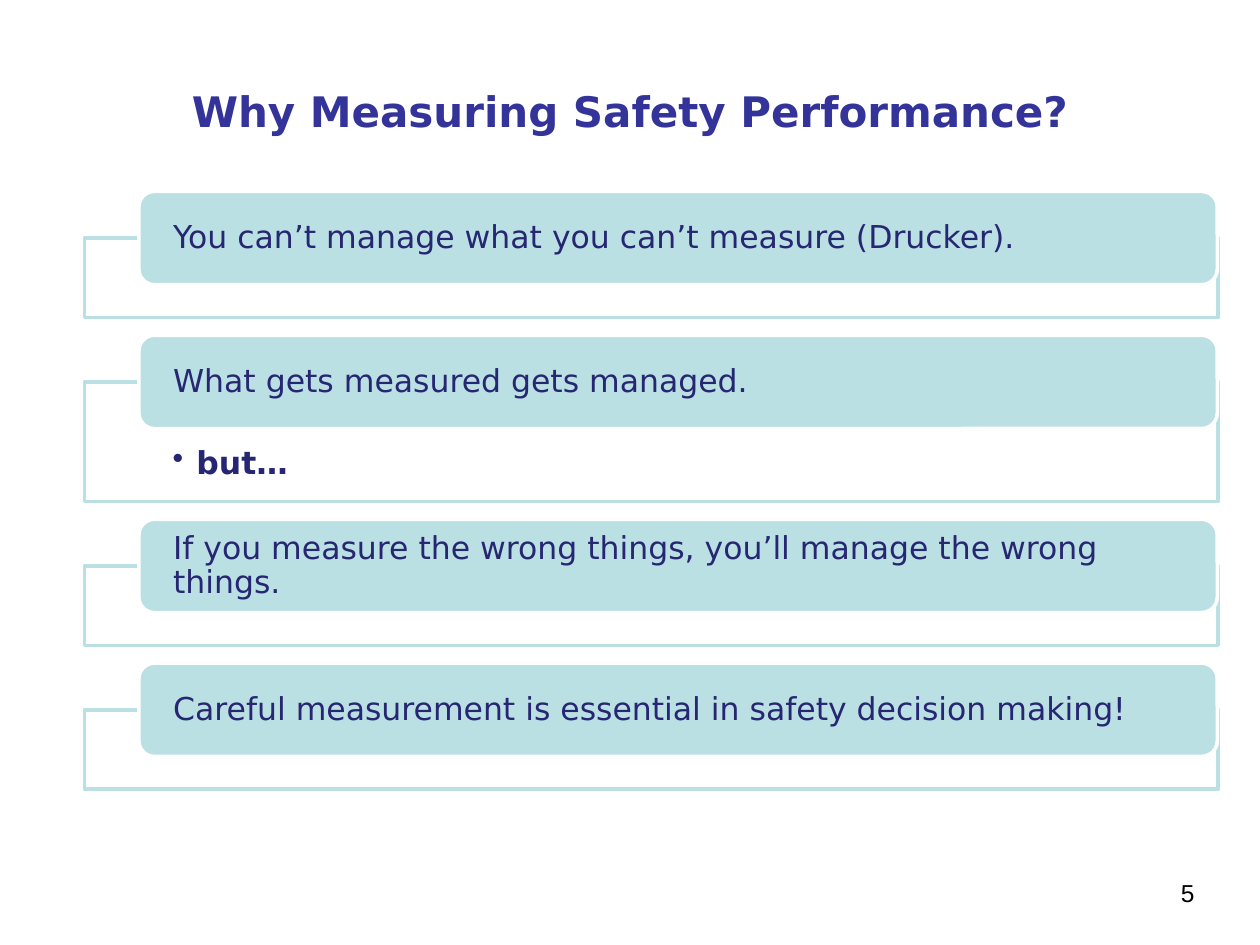
from dataclasses import dataclass

from lxml import etree
from pptx import Presentation
from pptx.dml.color import RGBColor
from pptx.enum.shapes import MSO_SHAPE
from pptx.enum.text import MSO_ANCHOR, PP_ALIGN
from pptx.oxml.ns import qn
from pptx.util import Cm, Pt

RECTANGLE, ROUNDED = MSO_SHAPE.RECTANGLE, MSO_SHAPE.ROUNDED_RECTANGLE
TOP, MIDDLE = MSO_ANCHOR.TOP, MSO_ANCHOR.MIDDLE
LEFT, CENTER, RIGHT = PP_ALIGN.LEFT, PP_ALIGN.CENTER, PP_ALIGN.RIGHT


@dataclass(frozen=True)
class Theme:
    title_color: str = "333399"
    body_color: str = "262673"
    number_color: str = "000000"
    accent: str = "BBE0E3"
    paper: str = "FFFFFF"
    font: str = "DejaVu Sans"
    number_font: str = "Arial"
    title_size: int = 24
    body_size: int = 18
    number_size: int = 14
    outline: int = 2


class SlideBuilder:
    """Draws the parts of one slide in a shared theme."""

    def __init__(self, slide, theme):
        self.slide = slide
        self.theme = theme

    def add_text(self, frame, text, color, size, font, bold=False, align=LEFT,
                 anchor=TOP, margins=(0.25, 0.13, 0.25, 0.13)):
        frame.word_wrap = True
        frame.vertical_anchor = anchor
        (frame.margin_left, frame.margin_top,
         frame.margin_right, frame.margin_bottom) = map(Cm, margins)
        paragraph = frame.paragraphs[0]
        paragraph.alignment = align
        run = paragraph.add_run()
        run.text = text
        run.font.name = font
        run.font.size = Pt(size)
        run.font.bold = bold
        run.font.color.rgb = RGBColor.from_string(color)
        return paragraph

    def title(self, text):
        heading = self.slide.shapes.title
        heading.left, heading.top = Cm(1.27), Cm(1.09)
        heading.width, heading.height = Cm(22.86), Cm(2.29)
        self.add_text(heading.text_frame, text, self.theme.title_color,
                      self.theme.title_size, self.theme.font, True, CENTER, MIDDLE)

    def page_number(self, text):
        box = self.slide.shapes.add_textbox(Cm(19.05), Cm(17.58), Cm(5.28), Cm(1.27))
        self.add_text(box.text_frame, text, self.theme.number_color,
                      self.theme.number_size, self.theme.number_font, align=RIGHT)

    def panel(self, kind, bounds, fill, line):
        shape = self.slide.shapes.add_shape(kind, *map(Cm, bounds))
        shape.shadow.inherit = False
        shape.fill.solid()
        shape.fill.fore_color.rgb = RGBColor.from_string(fill)
        shape.line.color.rgb = RGBColor.from_string(line)
        shape.line.width = Pt(self.theme.outline)
        return shape

    def frame(self, top, height, detail):
        outline = self.panel(RECTANGLE, (1.7, top, 22.86, height),
                             self.theme.paper, self.theme.accent)
        fill_color = outline.element.spPr.find(qn("a:solidFill"))[0]
        etree.SubElement(fill_color, qn("a:alpha")).set("val", "90000")
        if detail:
            paragraph = self.add_text(
                outline.text_frame, detail, self.theme.body_color,
                self.theme.body_size, self.theme.font, True,
                margins=(1.78, 1.32, 1.78, 0.36))
            paragraph.level = 1
            paragraph.line_spacing = 0.9
            properties = paragraph._p.get_or_add_pPr()
            properties.set("marL", str(Cm(0.48)))
            properties.set("indent", str(-Cm(0.48)))
            etree.SubElement(properties, qn("a:buChar")).set("char", "•")

    def statement(self, top, text):
        tab = self.panel(ROUNDED, (2.8, top, 21.74, 1.88),
                         self.theme.accent, self.theme.paper)
        paragraph = self.add_text(
            tab.text_frame, text, self.theme.body_color, self.theme.body_size,
            self.theme.font, anchor=MIDDLE, margins=(0.6, 0, 0.6, 0))
        paragraph.line_spacing = 0.9


REASONS = [
    ("You can’t manage what you can’t measure (Drucker).", ""),
    ("What gets measured gets managed.", "but…"),
    ("If you measure the wrong things, you’ll manage the wrong things.", ""),
    ("Careful measurement is essential in safety decision making!", ""),
]
FIRST_TOP, GAP, TAB_RISE = 4.8, 1.3, 0.94
PLAIN_HEIGHT, DETAIL_HEIGHT = 1.6, 2.41


def main():
    deck = Presentation()
    deck.slide_width, deck.slide_height = Cm(25.4), Cm(19.05)
    builder = SlideBuilder(deck.slides.add_slide(deck.slide_layouts[5]), Theme())
    builder.page_number("5")
    builder.title("Why Measuring Safety Performance?")
    top = FIRST_TOP
    for reason, detail in REASONS:
        height = DETAIL_HEIGHT if detail else PLAIN_HEIGHT
        builder.frame(top, height, detail)
        builder.statement(top - TAB_RISE, reason)
        top += height + GAP
    deck.save("out.pptx")


if __name__ == "__main__":
    main()
